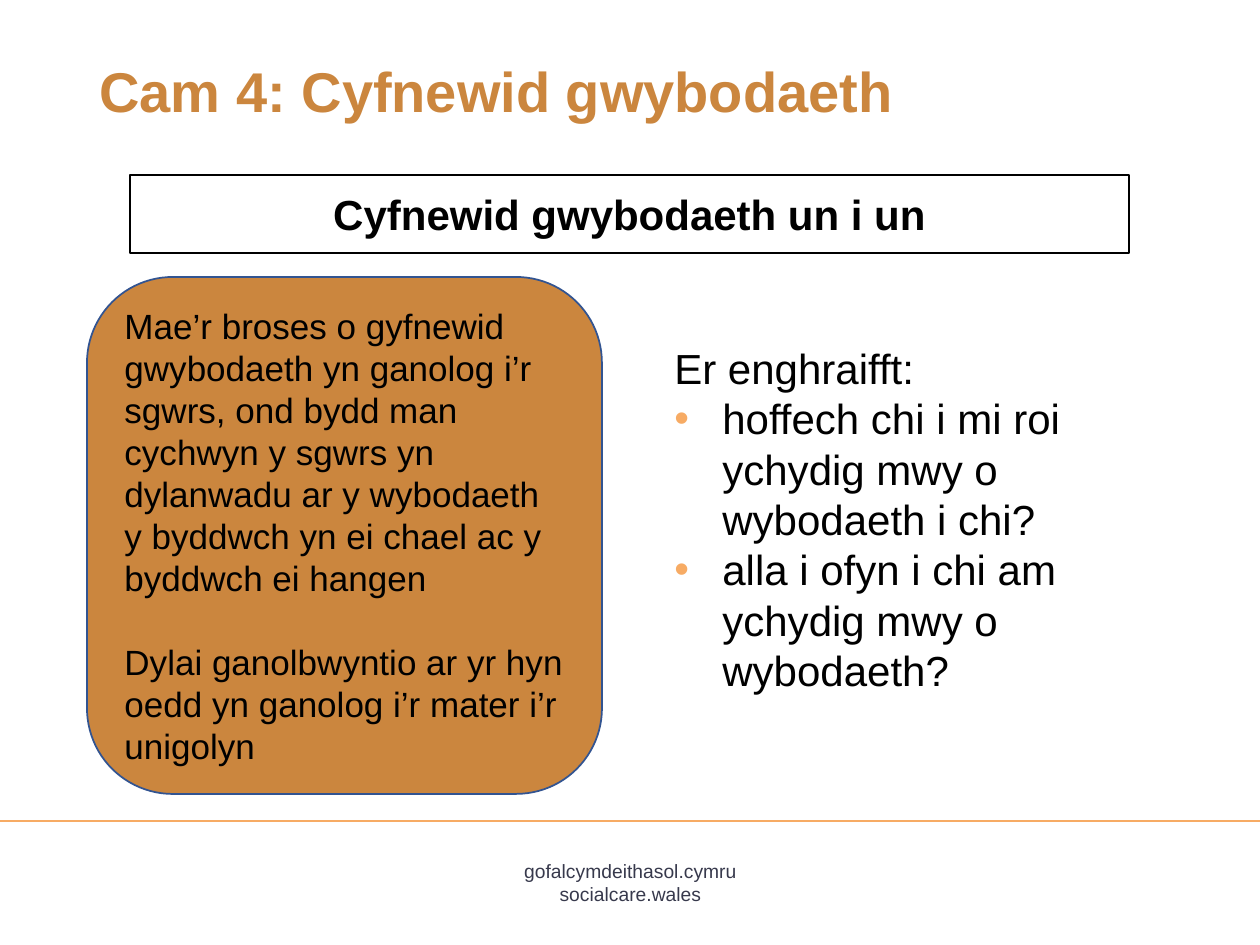
import pptx
import pptx.util
import pptx.dml.color
import pptx.enum.shapes
import pptx.enum.text
import pptx.oxml.ns
import lxml.etree

SCALE = 914400 / 126
FONT = "Arial"
COLORS = {
    "ochre": "CB863E",
    "peach": "F7AB64",
    "navy": "325491",
    "slate": "37394C",
    "black": "000000",
}
ALIGN = pptx.enum.text.PP_ALIGN
ANCHOR = pptx.enum.text.MSO_ANCHOR
KIND = pptx.enum.shapes.MSO_SHAPE


def px(count):
    """Turn whole px into EMU."""
    return pptx.util.Emu(round(count * SCALE))


def tint(name):
    """Return the named colour."""
    return pptx.dml.color.RGBColor.from_string(COLORS[name])


def add_node(parent, tag, **attrs):
    """Append a drawing element to a parent element."""
    return lxml.etree.SubElement(parent, pptx.oxml.ns.qn(tag), attrs)


def add_mark(para, color):
    """Give a paragraph a hanging bullet."""
    props = para._p.get_or_add_pPr()
    props.set("marL", str(px(48)))
    props.set("indent", str(-px(48)))
    add_node(add_node(props, "a:buClr"), "a:srgbClr", val=COLORS[color])
    add_node(props, "a:buFont", typeface=FONT)
    add_node(props, "a:buChar", char="•")


def fill_text(shape, lines, size, color="black", bold=False,
              align=ALIGN.LEFT, anchor=ANCHOR.TOP, gap=0, marks=()):
    """Write one paragraph per line into a shape."""
    frame = shape.text_frame
    frame.word_wrap = True
    frame.vertical_anchor = anchor
    for index, line in enumerate(lines):
        para = frame.add_paragraph() if index else frame.paragraphs[0]
        para.alignment = align
        if index and gap:
            para.space_before = pptx.util.Pt(gap)
        if index in marks:
            add_mark(para, "peach")
        run = para.add_run()
        run.text = line
        run.font.name = FONT
        run.font.size = pptx.util.Pt(size)
        run.font.bold = bold
        run.font.color.rgb = tint(color)


def add_text(slide, box, lines, size, **style):
    """Add a text box."""
    shape = slide.shapes.add_textbox(*map(px, box))
    fill_text(shape, lines, size, **style)


def add_panel(slide, kind, box, fill, line, width, lines, size, **style):
    """Add an outlined shape with text in its middle."""
    shape = slide.shapes.add_shape(kind, *map(px, box))
    shape.shadow.inherit = False
    if fill:
        shape.fill.solid()
        shape.fill.fore_color.rgb = tint(fill)
    else:
        shape.fill.background()
    shape.line.color.rgb = tint(line)
    shape.line.width = pptx.util.Pt(width)
    fill_text(shape, lines, size, anchor=ANCHOR.MIDDLE, **style)


def add_rule(slide, top, color):
    """Add a line across the slide."""
    kind = pptx.enum.shapes.MSO_CONNECTOR.STRAIGHT
    rule = slide.shapes.add_connector(kind, 0, px(top), px(1260), px(top))
    rule.line.color.rgb = tint(color)
    rule.line.width = pptx.util.Pt(1)
    add_node(rule._element.spPr, "a:effectLst")


def main():
    """Build and save the slide."""
    deck = pptx.Presentation()
    deck.slide_width, deck.slide_height = px(1260), px(945)
    slide = deck.slides.add_slide(deck.slide_layouts[6])
    add_text(slide, (488, 853, 285, 58),
             ["gofalcymdeithasol.cymru", "socialcare.wales"], 11,
             color="slate", align=ALIGN.CENTER)
    add_rule(slide, 821, "peach")
    add_text(slide, (87, 50, 984, 142), ["Cam 4: Cyfnewid gwybodaeth"], 32,
             color="ochre", bold=True)
    add_panel(slide, KIND.RECTANGLE, (130, 175, 999, 78), None, "black", 0.75,
              ["Cyfnewid gwybodaeth un i un"], 24, bold=True,
              align=ALIGN.CENTER)
    add_panel(slide, KIND.ROUNDED_RECTANGLE, (87, 277, 515, 517), "ochre",
              "navy", 1,
              ["Mae’r broses o gyfnewid gwybodaeth yn ganolog i’r sgwrs, "
               "ond bydd man cychwyn y sgwrs yn dylanwadu ar y wybodaeth "
               "y byddwch yn ei chael ac y byddwch ei hangen",
               "Dylai ganolbwyntio ar yr hyn oedd yn ganolog i’r mater i’r "
               "unigolyn"], 20, gap=24)
    add_text(slide, (662, 336, 479, 445),
             ["Er enghraifft:",
              "hoffech chi i mi roi ychydig mwy o wybodaeth i chi?",
              "alla i ofyn i chi am ychydig mwy o wybodaeth?"], 24,
             marks=(1, 2))
    deck.save("out.pptx")


if __name__ == "__main__":
    main()
